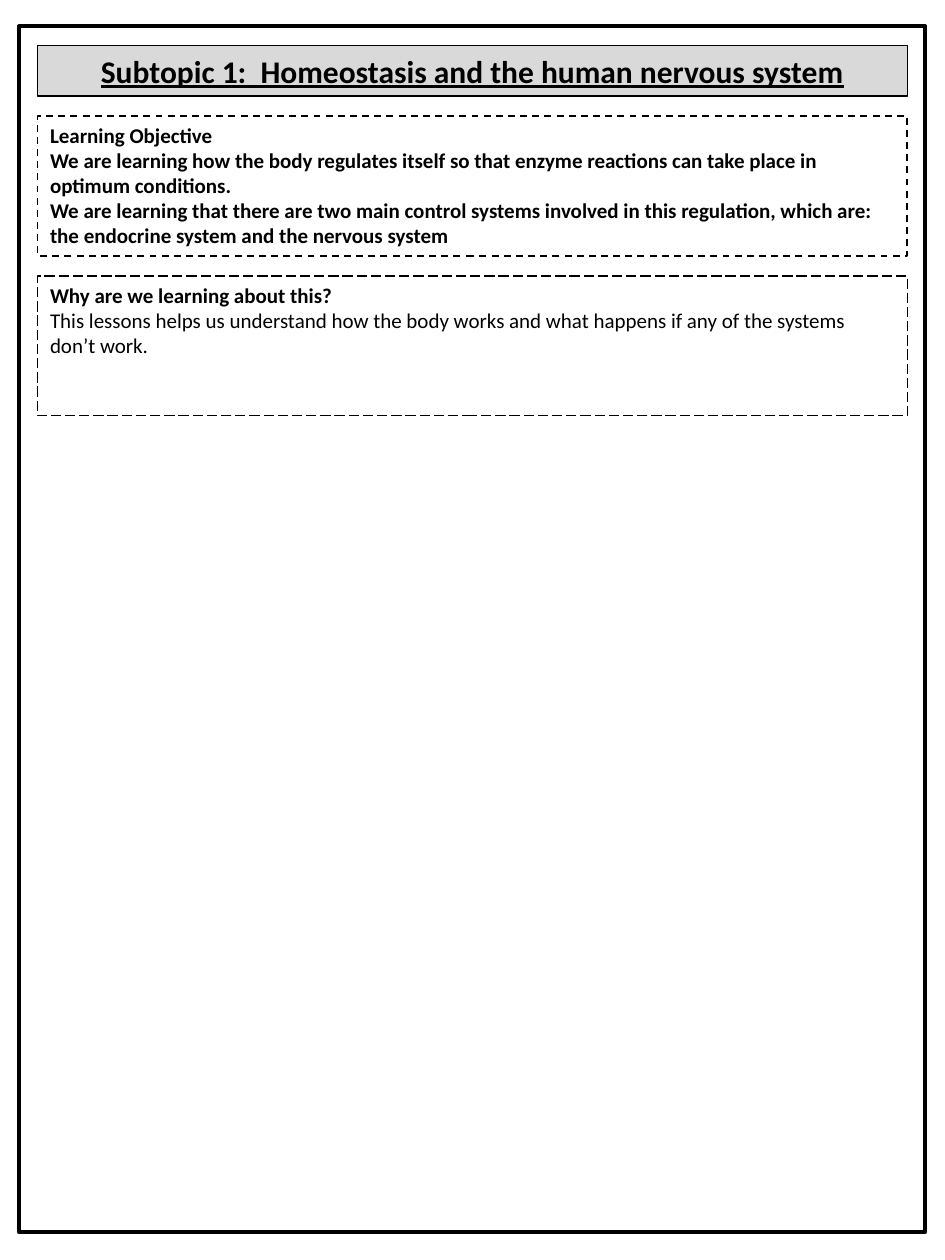
from pptx import Presentation
from pptx.dml.color import RGBColor
from pptx.enum.dml import MSO_LINE
from pptx.enum.shapes import MSO_SHAPE
from pptx.enum.text import MSO_ANCHOR, PP_ALIGN
from pptx.util import Pt

RECTANGLE = MSO_SHAPE.RECTANGLE
LEFT, CENTER = PP_ALIGN.LEFT, PP_ALIGN.CENTER
SOLID, DASH, LONG_DASH = MSO_LINE.SOLID, MSO_LINE.DASH, MSO_LINE.LONG_DASH
FONT, BLACK, GREY = "Calibri", "000000", "D9D9D9"

# Content: each paragraph is (text, bold)
PANELS = [
    dict(height=29, fill=GREY, weight=0.75, dash=SOLID,
         size=18, align=CENTER, underline=True,
         paragraphs=[("Subtopic 1:  Homeostasis and the human nervous system", True)]),
    dict(height=80, fill=None, weight=1, dash=DASH,
         size=12, align=LEFT, underline=False,
         paragraphs=[
             ("Learning Objective", True),
             ("We are learning how the body regulates itself so that enzyme "
              "reactions can take place in optimum conditions.", True),
             ("We are learning that there are two main control systems involved "
              "in this regulation, which are: the endocrine system and the "
              "nervous system", True)]),
    dict(height=80, fill=None, weight=0.75, dash=LONG_DASH,
         size=12, align=LEFT, underline=False,
         paragraphs=[
             ("Why are we learning about this?", True),
             ("This lessons helps us understand how the body works and what "
              "happens if any of the systems don’t work.", False)]),
]

# Layout in points
PAGE_WIDTH, PAGE_HEIGHT = 540, 720
FRAME = (10.8, 15.1, 518, 689)
PANEL_LEFT, PANEL_TOP, PANEL_GAP = 21.5, 25.9, 11.4
PANEL_WIDTH = PAGE_WIDTH - 2 * PANEL_LEFT


def color(value):
    return RGBColor.from_string(value)


def add_box(slide, bounds, weight, dash=SOLID, fill=None):
    shape = slide.shapes.add_shape(RECTANGLE, *map(Pt, bounds))
    shape.shadow.inherit = False
    if fill:
        shape.fill.solid()
        shape.fill.fore_color.rgb = color(fill)
    else:
        shape.fill.background()
    shape.line.color.rgb = color(BLACK)
    shape.line.width = Pt(weight)
    shape.line.dash_style = dash
    return shape


def write(shape, panel):
    text_frame = shape.text_frame
    text_frame.word_wrap = True
    text_frame.vertical_anchor = MSO_ANCHOR.TOP
    text_frame.text = "\n".join(text for text, _ in panel["paragraphs"])
    for paragraph, (_, bold) in zip(text_frame.paragraphs, panel["paragraphs"]):
        paragraph.alignment = panel["align"]
        font = paragraph.runs[0].font
        font.name = FONT
        font.size = Pt(panel["size"])
        font.bold = bold
        font.underline = panel["underline"]
        font.color.rgb = color(BLACK)


def main():
    presentation = Presentation()
    presentation.slide_width = Pt(PAGE_WIDTH)
    presentation.slide_height = Pt(PAGE_HEIGHT)
    slide = presentation.slides.add_slide(presentation.slide_layouts[6])

    # Page frame
    add_box(slide, FRAME, 2.25)

    # Panels stacked with equal gaps
    top = PANEL_TOP
    for panel in PANELS:
        bounds = (PANEL_LEFT, top, PANEL_WIDTH, panel["height"])
        shape = add_box(slide, bounds, panel["weight"], panel["dash"], panel["fill"])
        write(shape, panel)
        top += panel["height"] + PANEL_GAP

    presentation.save("out.pptx")


if __name__ == "__main__":
    main()
